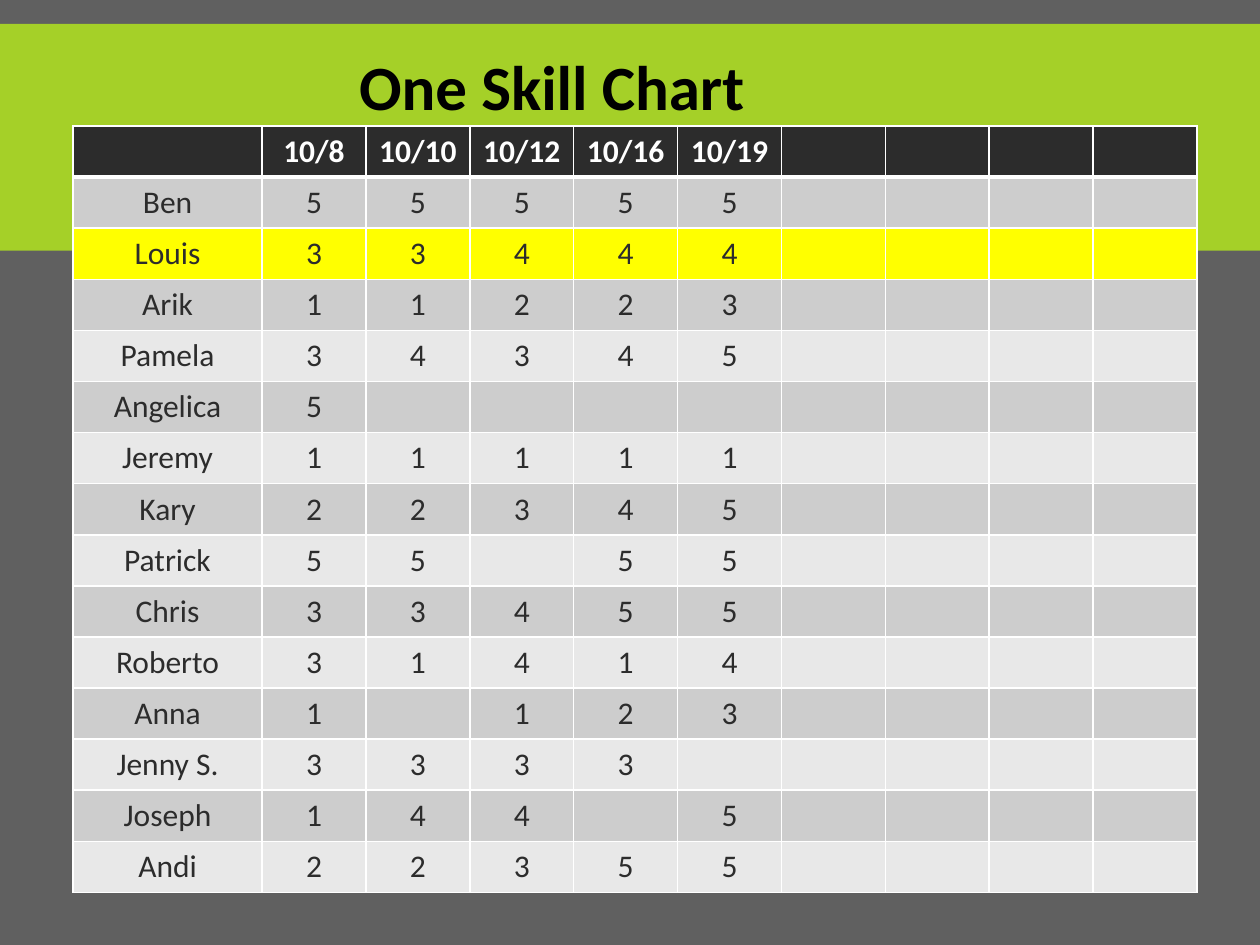
from lxml import etree
from pptx import Presentation
from pptx.dml.color import RGBColor
from pptx.enum.shapes import MSO_SHAPE
from pptx.enum.text import MSO_ANCHOR, PP_ALIGN
from pptx.oxml.ns import qn
from pptx.util import Inches, Pt

RECTANGLE = MSO_SHAPE.RECTANGLE
CENTER, LEFT = PP_ALIGN.CENTER, PP_ALIGN.LEFT
MIDDLE, TOP = MSO_ANCHOR.MIDDLE, MSO_ANCHOR.TOP

TITLE_ONLY_LAYOUT = 5
FONT = "Calibri"
COLORS = {
    "background": "606060",
    "band": "A5D028",
    "title": "000000",
    "header": "2C2C2C",
    "header text": "FFFFFF",
    "body text": "2C2C2C",
    "odd row": "CDCDCD",
    "even row": "E8E8E8",
    "highlight": "FFFF00",
    "border": "FFFFFF",
}

DATES = ["10/8", "10/10", "10/12", "10/16", "10/19"]
SPARE_COLUMNS = 4
HIGHLIGHTED = "Louis"
SCORES = {
    "Ben": [5, 5, 5, 5, 5],
    "Louis": [3, 3, 4, 4, 4],
    "Arik": [1, 1, 2, 2, 3],
    "Pamela": [3, 4, 3, 4, 5],
    "Angelica": [5, "", "", "", ""],
    "Jeremy": [1, 1, 1, 1, 1],
    "Kary": [2, 2, 3, 4, 5],
    "Patrick": [5, 5, "", 5, 5],
    "Chris": [3, 3, 4, 5, 5],
    "Roberto": [3, 1, 4, 1, 4],
    "Anna": [1, "", 1, 2, 3],
    "Jenny S.": [3, 3, 3, 3, ""],
    "Joseph": [1, 4, 4, "", 5],
    "Andi": [2, 2, 3, 5, 5],
}


def color(name):
    return RGBColor.from_string(COLORS[name])


def style_paragraph(para, size, color_name, bold, alignment):
    para.alignment = alignment
    para.font.name = FONT
    para.font.size = Pt(size)
    para.font.bold = bold
    para.font.color.rgb = color(color_name)


def add_band(page):
    band = page.shapes.add_shape(
        RECTANGLE, 0, Inches(0.19), Inches(10), Inches(1.8))
    band.shadow.inherit = False
    band.fill.solid()
    band.fill.fore_color.rgb = color("band")
    band.line.fill.background()


def add_title(page, text):
    """Fill the title placeholder and bring it in front of the other shapes."""
    title = page.shapes.title
    title.left, title.top = Inches(2.75), Inches(0.33)
    title.width, title.height = Inches(4.92), Inches(0.71)
    title.text_frame.text = text
    title.text_frame.vertical_anchor = TOP
    style_paragraph(title.text_frame.paragraphs[0], 36, "title", True, LEFT)
    title.element.getparent().append(title.element)


def set_borders(cell, top, bottom):
    """Draw all four cell borders; top and bottom widths are in points."""
    properties = cell._tc.get_or_add_tcPr()
    widths = {"a:lnL": 1, "a:lnR": 1, "a:lnT": top, "a:lnB": bottom}
    for position, (tag, width) in enumerate(widths.items()):
        line = etree.Element(qn(tag), w=str(Pt(width)))
        fill = etree.SubElement(line, qn("a:solidFill"))
        etree.SubElement(fill, qn("a:srgbClr"), val=COLORS["border"])
        properties.insert(position, line)


def row_fill(row, name):
    if row == 0:
        return "header"
    if name == HIGHLIGHTED:
        return "highlight"
    return "odd row" if row % 2 else "even row"


def format_cell(cell, value, row, fill_name):
    is_header = row == 0
    cell.text = str(value)
    cell.vertical_anchor = MIDDLE
    cell.fill.solid()
    cell.fill.fore_color.rgb = color(fill_name)
    text_color = "header text" if is_header else "body text"
    style_paragraph(cell.text_frame.paragraphs[0], 18, text_color, is_header, CENTER)
    set_borders(cell, top=3 if row == 1 else 1, bottom=3 if is_header else 1)


def add_score_table(page):
    spare = [""] * SPARE_COLUMNS
    rows = [["", *DATES, *spare]]
    rows += [[name, *scores, *spare] for name, scores in SCORES.items()]
    width, height, name_width = Inches(8.92), Inches(6.08), Inches(1.5)
    column_count = len(rows[0])

    table = page.shapes.add_table(
        len(rows), column_count, Inches(0.58), Inches(1), width, height).table
    for column in table.columns:
        column.width = (width - name_width) // (column_count - 1)
    table.columns[0].width = name_width

    for row, values in enumerate(rows):
        table.rows[row].height = height // len(rows)
        fill_name = row_fill(row, values[0])
        for column, value in enumerate(values):
            format_cell(table.cell(row, column), value, row, fill_name)


def main():
    deck = Presentation()
    deck.slide_width, deck.slide_height = Inches(10), Inches(7.5)
    page = deck.slides.add_slide(deck.slide_layouts[TITLE_ONLY_LAYOUT])
    page.background.fill.solid()
    page.background.fill.fore_color.rgb = color("background")
    add_band(page)
    add_score_table(page)
    add_title(page, "One Skill Chart")
    deck.save("out.pptx")


if __name__ == "__main__":
    main()
